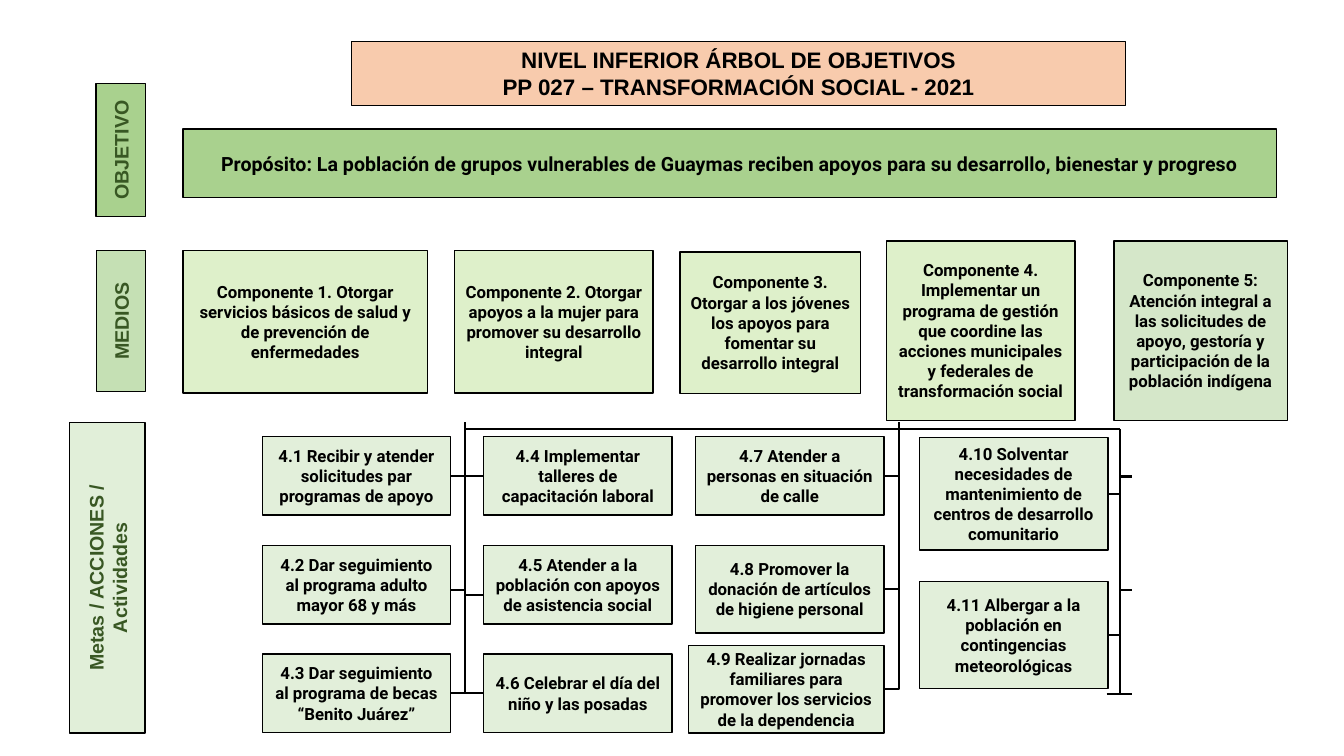
from lxml import etree
from pptx import Presentation
from pptx.dml.color import RGBColor
from pptx.enum.shapes import MSO_CONNECTOR, MSO_SHAPE
from pptx.enum.text import MSO_ANCHOR, MSO_AUTO_SIZE, PP_ALIGN
from pptx.oxml.ns import qn
from pptx.util import Cm, Pt

COLORS = {
    "black": "000000", "label": "385723", "title": "F8CBAD", "purpose": "A9D18E",
    "means": "C5E0B4", "component": "92D050", "indigenous": "70AD47",
}

# text, left, top, width, height, fill, opacity in percent
COMPONENTS = [
    ("Componente 1. Otorgar servicios básicos de salud y de prevención de enfermedades",
     4.61, 6.32, 6.17, 3.58, "component", 30),
    ("Componente 2. Otorgar apoyos a la mujer para promover su desarrollo integral",
     11.46, 6.32, 5, 3.58, "component", 30),
    ("Componente 3. Otorgar a los jóvenes los apoyos para fomentar su desarrollo integral",
     17.14, 6.35, 4.55, 3.56, "component", 30),
    ("Componente 4. Implementar un programa de gestión que coordine las acciones "
     "municipales y federales de transformación social",
     22.34, 6.07, 4.75, 4.52, "component", 30),
    ("Componente 5: Atención integral a las solicitudes de apoyo, gestoría y "
     "participación de la población indígena",
     28.07, 6.07, 4.37, 4.52, "indigenous", 29),
]

# text, left, top, width, height, fill, opacity in percent (all turned upwards)
LEVELS = [
    ("OBJETIVO", 1.37, 3.16, 3.35, 1.24, "purpose", 100),
    ("MEDIOS", 1.27, 7.47, 3.56, 1.24, "means", 100),
    ("Metas / ACCIONES / Actividades", -1.2, 13.61, 7.82, 1.9, "means", 50),
]

WIDTH, HEIGHT = 4.75, 1.98
ROWS = [11 + 2.74 * i for i in range(3)]
FIRST, MIDDLE, LAST = 11.73, 22.66, 28.22  # trunks
BAR_Y = 10.8

# text, left, top, width, height, trunk, top of the branch, foot of it if off the middle
ACTIVITIES = [
    ("4.1 Recibir y atender solicitudes par programas de apoyo",
     6.61, ROWS[0], WIDTH, HEIGHT, FIRST, 11, None),
    ("4.2 Dar seguimiento al programa adulto mayor 68 y más",
     6.61, ROWS[1], WIDTH, HEIGHT, FIRST, 10.69, 14.86),
    ("4.3 Dar seguimiento al programa de becas “Benito Juárez”",
     6.61, ROWS[2], WIDTH, HEIGHT, FIRST, 10.64, None),
    ("4.4 Implementar talleres de capacitación laboral",
     12.19, ROWS[0], WIDTH, HEIGHT, FIRST, 11, None),
    ("4.5 Atender a la población con apoyos de asistencia social",
     12.19, ROWS[1], WIDTH, HEIGHT, FIRST, 11.4, 14.99),
    ("4.6 Celebrar el día del niño y las posadas",
     12.19, ROWS[2], WIDTH, HEIGHT, FIRST, BAR_Y, None),
    ("4.7 Atender a personas en situación de calle",
     17.53, ROWS[0], WIDTH, HEIGHT, MIDDLE, 11.4, None),
    ("4.8 Promover la donación de artículos de higiene personal",
     17.53, ROWS[1], WIDTH, 2.21, MIDDLE, 10.69, None),
    ("4.9 Realizar jornadas familiares para promover los servicios de la dependencia",
     17.35, 16.26, 4.93, 2.21, MIDDLE, 10.64, None),
    ("4.10 Solventar necesidades de mantenimiento de centros de desarrollo comunitario",
     23.17, 11.02, WIDTH, 2.84, LAST, 11.4, None),
    ("4.11 Albergar a la población en contingencias meteorológicas",
     23.17, 14.66, WIDTH, 2.69, LAST, 12.9, None),
]

# foot x, foot y, top of the branches of the last trunk that reach no box
LOOSE_BRANCHES = [(28.52, 12.01, 11.02), (28.52, 14.86, BAR_Y),
                  (28.52, 17.5, 11.4), (27.89, 17.5, 11.58)]


def rgb(name):
    return RGBColor.from_string(COLORS[name])


def add_box(slide, text, left, top, width, height, fill, opacity=100, size=12,
            font="Roboto", color="black", shape=MSO_SHAPE.FLOWCHART_PROCESS, border=1):
    sp = slide.shapes.add_shape(shape, Cm(left), Cm(top), Cm(width), Cm(height))
    sp.shadow.inherit = False
    sp.fill.solid()
    sp.fill.fore_color.rgb = rgb(fill)
    if opacity < 100:
        clr = sp.fill._xPr.find(qn("a:solidFill"))[0]
        etree.SubElement(clr, qn("a:alpha"), val=str(opacity * 1000))
    sp.line.color.rgb = rgb("black")
    sp.line.width = Pt(border)
    tf = sp.text_frame
    tf.word_wrap = True
    tf.vertical_anchor = MSO_ANCHOR.MIDDLE
    tf.text = text
    for p in tf.paragraphs:
        p.alignment = PP_ALIGN.CENTER
        p.font.name, p.font.size, p.font.bold = font, Pt(size), True
        p.font.color.rgb = rgb(color)
    return sp


def add_line(slide, x1, y1, x2, y2, kind=MSO_CONNECTOR.STRAIGHT):
    cxn = slide.shapes.add_connector(kind, Cm(x1), Cm(y1), Cm(x2), Cm(y2))
    cxn.line.color.rgb = rgb("black")
    cxn.line.width = Pt(1.5)
    etree.SubElement(cxn._element.spPr, qn("a:effectLst"))
    return cxn


def add_branch(slide, foot_x, foot_y, trunk, top):
    """Draw a one-corner elbow: sideways from its foot, then up along the trunk."""
    cxn = add_line(slide, foot_x, foot_y, trunk, top, MSO_CONNECTOR.ELBOW)
    cxn._element.spPr.find(qn("a:prstGeom")).set("prst", "bentConnector2")


def add_activity(slide, text, left, top, width, height, trunk, branch_top, foot_y):
    """Draw an activity and the branch that ties it to its trunk."""
    add_box(slide, text, left, top, width, height, "means", 49)
    foot_x = left if trunk < left else left + width
    add_branch(slide, foot_x, foot_y or top + height / 2, trunk, branch_top)


def main():
    prs = Presentation()
    prs.slide_width, prs.slide_height = Cm(33.87), Cm(19.05)
    slide = prs.slides.add_slide(prs.slide_layouts[6])

    title = add_box(slide, "NIVEL INFERIOR ÁRBOL DE OBJETIVOS\nPP 027 – TRANSFORMACIÓN SOCIAL - 2021",
                    8.86, 1.04, 19.51, 1.63, "title", size=16, font="Arial",
                    shape=MSO_SHAPE.RECTANGLE, border=0.75)
    title.text_frame.vertical_anchor = MSO_ANCHOR.TOP
    title.text_frame.auto_size = MSO_AUTO_SIZE.SHAPE_TO_FIT_TEXT
    add_box(slide, "Propósito: La población de grupos vulnerables de Guaymas reciben apoyos "
            "para su desarrollo, bienestar y progreso", 4.61, 3.25, 27.56, 1.73, "purpose", size=14)

    for activity in ACTIVITIES:
        add_activity(slide, *activity)
    for foot_x, foot_y, top in LOOSE_BRANCHES:
        add_branch(slide, foot_x, foot_y, LAST, top)
    for level in LEVELS:
        add_box(slide, *level, size=14, font="Arial", color="label").rotation = 270
    for component in COMPONENTS:
        add_box(slide, *component)
    for trunk in (FIRST, LAST):
        add_line(slide, MIDDLE, BAR_Y, trunk, BAR_Y)

    prs.save("out.pptx")


if __name__ == "__main__":
    main()
